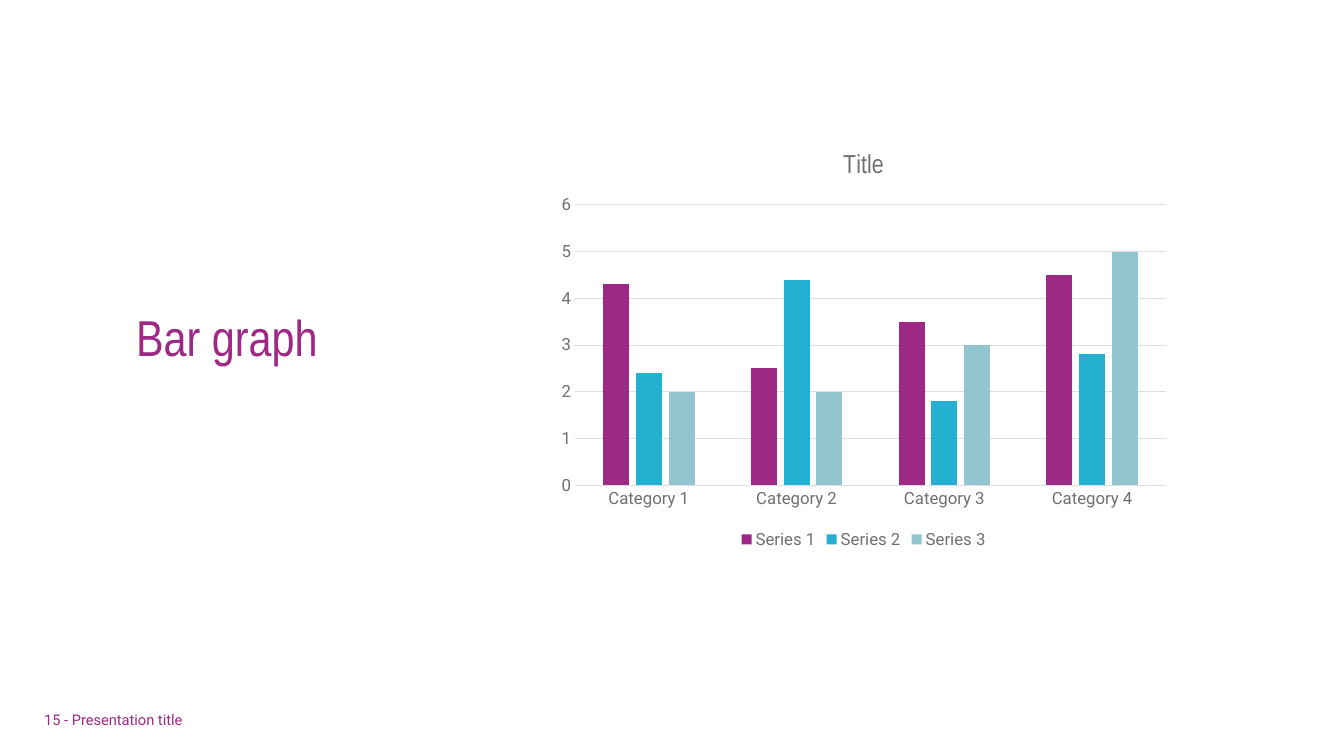
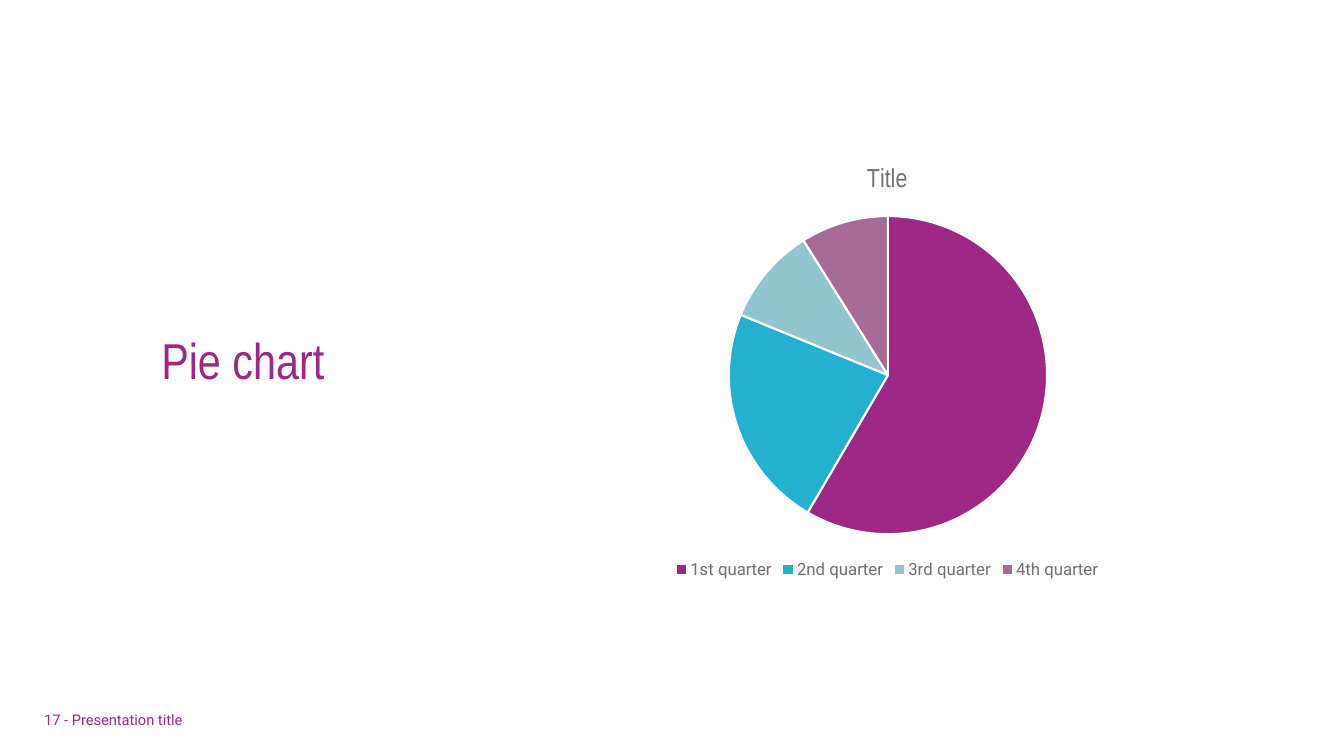
from pptx import Presentation
from pptx.chart.data import CategoryChartData as Data
from pptx.dml.color import RGBColor as Rgb
from pptx.enum.chart import XL_CHART_TYPE as Kind, XL_LEGEND_POSITION as Spot, XL_TICK_MARK as Tick
from pptx.enum.text import MSO_ANCHOR as Anchor, MSO_AUTO_SIZE as Fit, PP_ALIGN as Align
from pptx.oxml import parse_xml
from pptx.oxml.ns import nsdecls
from pptx.util import Inches, Pt

WIDE, HIGH = Inches(13.33), Inches(7.5)
HEAD, BODY = "Arial Narrow", "Roboto"
PLUM, GREY, RULE, WHITE = "9E2886", "707070", "DEDEDE", "FFFFFF"
TINTS = [PLUM, "24B1D1", "93C5D1", "A66B96"]


def place(x, y, w, h):
    """Turn percentages of the slide into a box."""
    return [int(side * share / 100) for side, share in zip((WIDE, HIGH, WIDE, HIGH), (x, y, w, h))]


def paint(part, tint):
    """Give a fill or a line one solid colour."""
    fill = part.fill if hasattr(part, "fill") else part
    fill.solid()
    fill.fore_color.rgb = Rgb.from_string(tint)


def style(font, size=12, face=BODY, tint=GREY):
    """Set the look of a font."""
    font.size, font.name, font.bold = Pt(size), face, False
    font.color.rgb = Rgb.from_string(tint)


def write(frame, text, align=Align.LEFT, space=1.0, **look):
    """Put one formatted paragraph in a text frame."""
    para = frame.paragraphs[0]
    para.alignment, para.line_spacing = align, space
    run = para.add_run()
    run.text = text
    style(run.font, **look)


def add_title(slide, text, box):
    """Move and format the title placeholder."""
    title = slide.shapes.title
    title.left, title.top, title.width, title.height = box
    frame = title.text_frame
    frame.auto_size, frame.word_wrap = Fit.NONE, True
    frame.vertical_anchor = Anchor.MIDDLE
    write(frame, text, space=0.8, size=36, face=HEAD, tint=PLUM)


def add_foot(slide, page, box):
    """Add the page number and deck name."""
    frame = slide.shapes.add_textbox(*box).text_frame
    frame.word_wrap = False
    write(frame, f"{page} - Presentation title", size=10.5, tint=PLUM)


def set_plot(chart, x, y, w, h):
    """Fix the inner plot area in percentages of the chart."""
    area = chart.element.xpath(".//c:plotArea")[0]
    for old in area.xpath("./c:layout"):
        area.remove(old)
    parts = "".join(f'<c:{tag} val="{share / 100:.3f}"/>' for tag, share in zip("xywh", (x, y, w, h)))
    area.insert(0, parse_xml(
        f'<c:layout {nsdecls("c")}><c:manualLayout><c:layoutTarget val="inner"/>'
        f'<c:xMode val="edge"/><c:yMode val="edge"/>{parts}</c:manualLayout></c:layout>'))


def add_chart(slide, kind, cats, rows, box, plot):
    """Add a chart with the shared title, legend and fonts."""
    data = Data()
    data.categories = cats
    for num, row in enumerate(rows, 1):
        data.add_series(f"Series {num}", row)
    chart = slide.shapes.add_chart(kind, *box, data).chart
    style(chart.font)
    chart.has_title = True
    chart.chart_title.include_in_layout = False
    write(chart.chart_title.text_frame, "Title", align=Align.CENTER, size=18.6, face=HEAD)
    chart.has_legend = True
    chart.legend.position, chart.legend.include_in_layout = Spot.BOTTOM, False
    style(chart.legend.font)
    set_plot(chart, *plot)
    return chart


def dress_bars(chart):
    """Colour the bars and format both axes."""
    bars = chart.plots[0]
    bars.gap_width, bars.overlap, bars.vary_by_categories = 219, -27, False
    for row, tint in zip(bars.series, TINTS):
        paint(row.format.fill, tint)
    cat, val = chart.category_axis, chart.value_axis
    for axis in (cat, val):
        axis.major_tick_mark = axis.minor_tick_mark = Tick.NONE
        style(axis.tick_labels.font)
    val.minimum_scale, val.maximum_scale, val.major_unit = 0, 6, 1
    val.has_major_gridlines = True
    for line in (cat.format.line, val.major_gridlines.format.line):
        paint(line, RULE)
        line.width = Pt(0.75)
    val.format.line.fill.background()


def dress_pie(chart):
    """Colour the slices and part them with white lines."""
    row = chart.plots[0].series[0]
    for num, tint in enumerate(TINTS):
        form = row.points[num].format
        paint(form.fill, tint)
        paint(form.line, WHITE)
        form.line.width = Pt(1.5)


def add_page(deck, page, text, spot):
    """Start a slide with its title and footer."""
    slide = deck.slides.add_slide(deck.slide_layouts[5])
    add_title(slide, text, place(*spot, 17.25, 8.4))
    add_foot(slide, page, place(2.55, 93.33, 12.38, 3.73))
    return slide


def main():
    """Build and save the deck."""
    deck = Presentation()
    deck.slide_width, deck.slide_height = WIDE, HIGH

    slide = add_page(deck, 15, "Bar graph", (9.38, 41.07))
    cats = [f"Category {num}" for num in range(1, 5)]
    rows = [(4.3, 2.5, 3.5, 4.5), (2.4, 4.4, 1.8, 2.8), (2, 2, 3, 5)]
    dress_bars(add_chart(slide, Kind.COLUMN_CLUSTERED, cats, rows,
                         place(40.81, 17.6, 46.89, 55.6), (4.2, 17.1, 93.8, 66.7)))

    slide = add_page(deck, 17, "Pie chart", (11.25, 44.13))
    cats = [f"{rank} quarter" for rank in ("1st", "2nd", "3rd", "4th")]
    dress_pie(add_chart(slide, Kind.PIE, cats, [(59, 23, 10, 9)],
                        place(41.64, 19.47, 48.76, 57.73), (25.8, 15.8, 48.6, 72.9)))
    deck.save("out.pptx")


if __name__ == "__main__":
    main()
